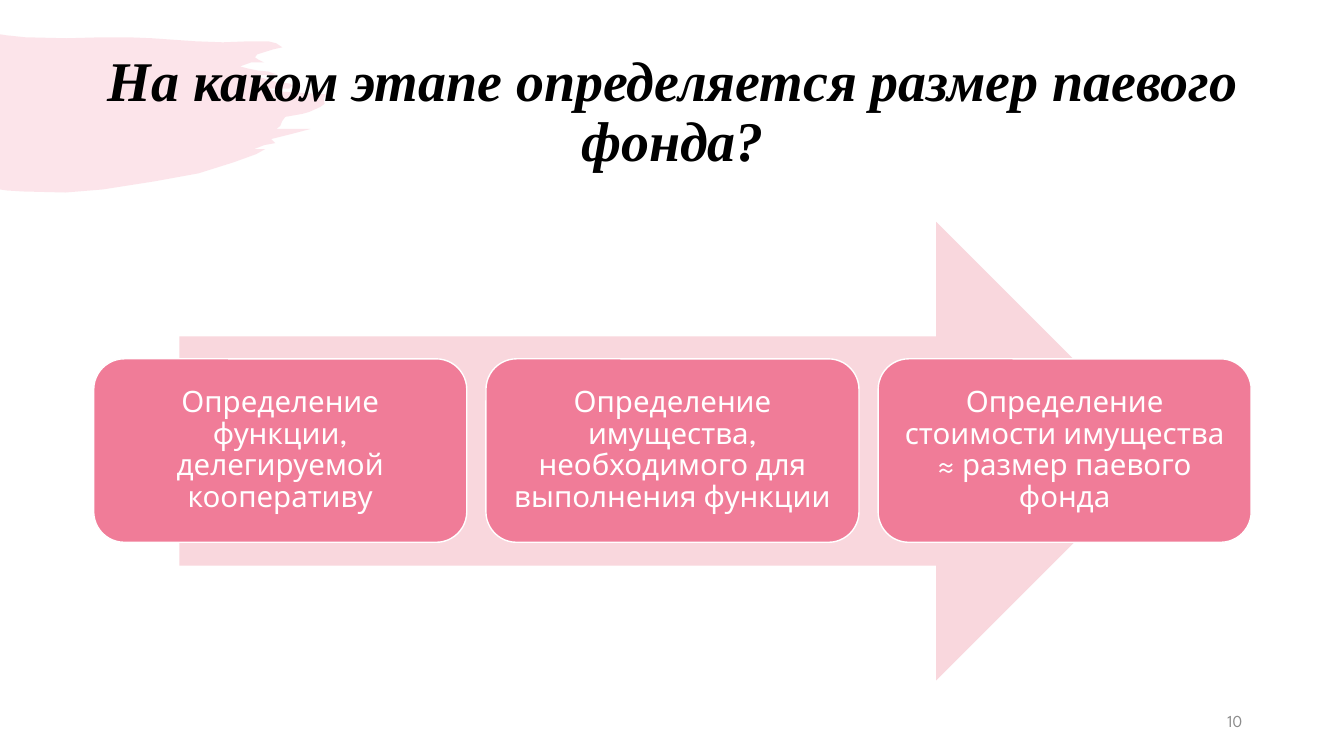
from lxml import etree
from pptx import Presentation
from pptx.dml.color import RGBColor
from pptx.enum.shapes import MSO_SHAPE
from pptx.enum.text import MSO_ANCHOR, PP_ALIGN
from pptx.oxml.ns import qn
from pptx.util import Inches, Pt

ARROW = MSO_SHAPE.RIGHT_ARROW
ROUNDED = MSO_SHAPE.ROUNDED_RECTANGLE
MIDDLE = MSO_ANCHOR.MIDDLE
CENTER, RIGHT = PP_ALIGN.CENTER, PP_ALIGN.RIGHT

PINK = RGBColor(0xF0, 0x7C, 0x98)
PALE_PINK = RGBColor(0xF9, 0xD7, 0xDD)
WHITE = RGBColor(0xFF, 0xFF, 0xFF)
BLACK = RGBColor(0x00, 0x00, 0x00)
GREY = RGBColor(0x8C, 0x8C, 0x8C)

BODY_FONT = "League Spartan"
TITLE_FONT = "Times New Roman"

# Outline of the brush stroke, in inches
BRUSH = [
    (0, 0.34), (0.06, 0.35), (0.25, 0.37), (0.66, 0.38), (1.02, 0.37),
    (1.27, 0.37), (1.51, 0.38), (1.94, 0.41), (2.21, 0.42), (2.48, 0.41),
    (2.66, 0.41), (2.74, 0.43), (2.8, 0.47), (2.71, 0.49), (2.55, 0.54),
    (2.53, 0.57), (2.56, 0.59), (2.62, 0.62), (2.49, 0.62), (2.38, 0.66),
    (2.46, 0.68), (2.56, 0.7), (2.66, 0.71), (2.75, 0.74), (2.51, 0.75),
    (2.63, 0.78), (2.73, 0.81), (2.76, 0.83), (2.8, 0.82), (2.88, 0.83),
    (2.9, 0.85), (2.87, 0.88), (2.84, 0.88), (2.63, 0.88), (2.8, 0.91),
    (3.3, 0.94), (3.21, 0.97), (3.22, 1.03), (3.18, 1.06), (3.07, 1.11),
    (3, 1.13), (2.83, 1.16), (2.8, 1.2), (2.78, 1.25), (2.74, 1.28),
    (3.08, 1.28), (2.89, 1.33), (2.69, 1.38), (2.73, 1.42), (2.62, 1.44),
    (2.52, 1.48), (2.63, 1.48), (2.54, 1.53), (2.32, 1.61), (1.97, 1.72),
    (1.53, 1.8), (1.02, 1.88), (0.65, 1.91), (0.23, 1.9), (0.07, 1.89),
    (0, 1.88),
]

STEPS = [
    "Определение функции, делегируемой кооперативу",
    "Определение имущества, необходимого для выполнения функции",
    "Определение стоимости имущества ≈ размер паевого фонда",
]
STEP_LEFT, STEP_TOP, STEP_W, STEP_H = 0.93, 3.56, 3.7, 1.82
STEP_PITCH = 3.89


def style(s, fill, line=None):
    s.shadow.inherit = False
    s.fill.solid()
    s.fill.fore_color.rgb = fill
    if line is None:
        s.line.fill.background()
    else:
        s.line.color.rgb = line
        s.line.width = Pt(1)


def write(s, text, size, color, font=BODY_FONT, align=CENTER, spacing=None,
          bold=False, italic=False, inset=None):
    tf = s.text_frame
    tf.word_wrap = True
    tf.vertical_anchor = MIDDLE
    if inset is not None:
        tf.margin_left = tf.margin_right = Inches(inset)
        tf.margin_top = tf.margin_bottom = Inches(inset)
    p = tf.paragraphs[0]
    p.alignment = align
    if spacing is not None:
        p.line_spacing = spacing
    r = p.add_run()
    r.text = text
    r.font.name = font
    r.font.size = Pt(size)
    r.font.bold = bold
    r.font.italic = italic
    r.font.color.rgb = color


def add_box(slide, left, top, width, height):
    return slide.shapes.add_textbox(
        Inches(left), Inches(top), Inches(width), Inches(height))


def add_preset(slide, kind, left, top, width, height, fill, line=None):
    s = slide.shapes.add_shape(
        kind, Inches(left), Inches(top), Inches(width), Inches(height))
    style(s, fill, line)
    return s


def add_brush(slide):
    points = [(Inches(x), Inches(y)) for x, y in BRUSH]
    builder = slide.shapes.build_freeform(*points[0])
    builder.add_line_segments(points[1:], close=True)
    s = builder.convert_to_shape()
    style(s, PINK)
    color = s.fill._xPr.find(qn("a:solidFill"))[0]
    etree.SubElement(color, qn("a:alpha")).set("val", "20000")


def main():
    prs = Presentation()
    prs.slide_width, prs.slide_height = Inches(13.33), Inches(7.5)
    slide = prs.slides.add_slide(prs.slide_layouts[6])

    # Brush stroke and title
    add_brush(slide)
    write(add_box(slide, 0.92, 0.4, 11.5, 1.45),
          "На каком этапе определяется размер паевого фонда?", 40, BLACK,
          font=TITLE_FONT, spacing=0.9, bold=True, italic=True)

    # Arrow with the steps on it
    add_preset(slide, ARROW, 1.78, 2.2, 9.78, 4.55, PALE_PINK)
    for i, text in enumerate(STEPS):
        s = add_preset(slide, ROUNDED, STEP_LEFT + i * STEP_PITCH, STEP_TOP,
                       STEP_W, STEP_H, PINK, WHITE)
        # The rounded corner adds 0.09 of its own to the inset
        write(s, text, 21, WHITE, spacing=0.9, inset=0.09)

    # Slide number
    write(add_box(slide, 9.42, 6.95, 3, 0.4), "10", 12, GREY, align=RIGHT)

    prs.save("out.pptx")


if __name__ == "__main__":
    main()
